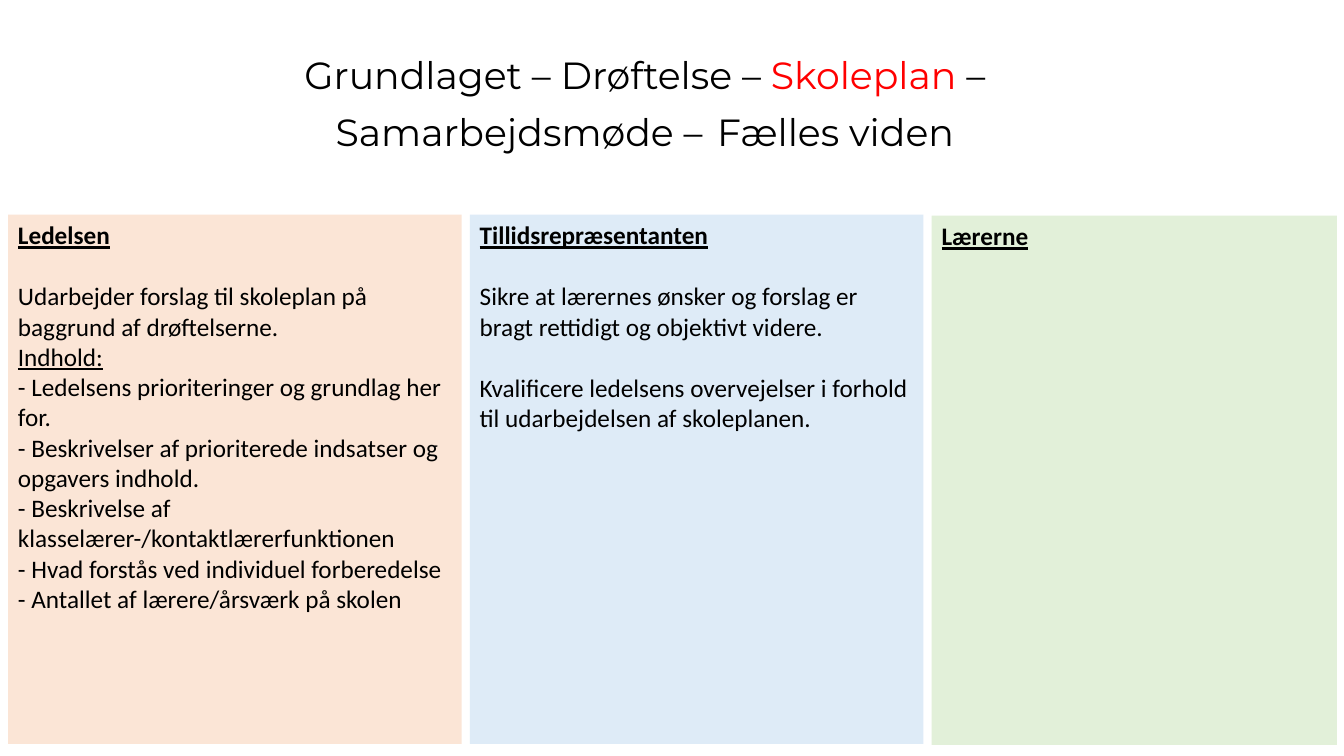
from pptx import Presentation
from pptx import util as u
from pptx.dml.color import RGBColor
from pptx.enum import shapes, text

BLACK = RGBColor(0x00, 0x00, 0x00)
RED = RGBColor(0xFF, 0x00, 0x00)
PEACH = RGBColor(0xFB, 0xE5, 0xD6)
LIGHT_BLUE = RGBColor(0xDE, 0xEB, 0xF7)
LIGHT_GREEN = RGBColor(0xE2, 0xF0, 0xD9)

SCALE = 9144  # EMU per px, 100 px to the inch
SLIDE_SIZE = (1333, 750)
TITLE_BOX = (162, 26, 955, 136)
COLUMN_LEFT, COLUMN_HEIGHT, COLUMN_GAP = 8, 525, 8

TITLE_RUNS = [
    ("Grundlaget – Drøftelse – ", 27, BLACK),
    ("Skoleplan", 27, RED),
    (" – Samarbejdsmøde –", 27, BLACK),
    (" ", 40, BLACK),
    ("Fælles viden", 27, BLACK),
]

HEADING = {"bold": True, "underline": True}
SUBHEADING = {"bold": False, "underline": True}
BODY = {"bold": False, "underline": False}
LINE_GAP = 22  # points, one line of body text

# Each column: fill, top, width, paragraphs of (text, format, space before)
COLUMNS = [
    (PEACH, 213, 450, [
        ("Ledelsen", HEADING, 0),
        ("Udarbejder forslag til skoleplan på baggrund af drøftelserne.", BODY, LINE_GAP),
        ("Indhold:", SUBHEADING, 0),
        ("- Ledelsens prioriteringer og grundlag her for.", BODY, 0),
        ("- Beskrivelser af prioriterede indsatser og opgavers indhold.", BODY, 0),
        ("- Beskrivelse af klasselærer-/kontaktlærerfunktionen", BODY, 0),
        ("- Hvad forstås ved individuel forberedelse", BODY, 0),
        ("- Antallet af lærere/årsværk på skolen", BODY, 0),
    ]),
    (LIGHT_BLUE, 213, 450, [
        ("Tillidsrepræsentanten", HEADING, 0),
        ("Sikre at lærernes ønsker og forslag er bragt rettidigt og objektivt videre.",
         BODY, LINE_GAP),
        ("Kvalificere ledelsens overvejelser i forhold til udarbejdelsen af skoleplanen.",
         BODY, LINE_GAP),
    ]),
    (LIGHT_GREEN, 214, 402, [
        ("Lærerne", HEADING, 0),
    ]),
]


def px(length):
    return u.Emu(length * SCALE)


def add_run(paragraph, words, color, **formats):
    run = paragraph.add_run()
    run.text = words
    for name, value in formats.items():
        setattr(run.font, name, value)
    run.font.color.rgb = color


def fill_title(title):
    title.left, title.top, title.width, title.height = map(px, TITLE_BOX)
    frame = title.text_frame
    frame.word_wrap = True
    frame.auto_size = text.MSO_AUTO_SIZE.NONE
    frame.vertical_anchor = text.MSO_ANCHOR.BOTTOM
    paragraph = frame.paragraphs[0]
    paragraph.alignment = text.PP_ALIGN.CENTER
    paragraph.line_spacing = 0.9
    paragraph.space_before = u.Pt(0)
    for words, size, color in TITLE_RUNS:
        add_run(paragraph, words, color, name="Montserrat", size=u.Pt(size))


def add_column(slide, box, fill, paragraphs):
    shape = slide.shapes.add_shape(shapes.MSO_SHAPE.RECTANGLE, *map(px, box))
    shape.shadow.inherit = False
    shape.fill.solid()
    shape.fill.fore_color.rgb = fill
    shape.line.fill.background()
    frame = shape.text_frame
    frame.word_wrap = True
    frame.vertical_anchor = text.MSO_ANCHOR.TOP
    for index, (words, formats, space) in enumerate(paragraphs):
        paragraph = frame.add_paragraph() if index else frame.paragraphs[0]
        paragraph.alignment = text.PP_ALIGN.LEFT
        paragraph.space_before = u.Pt(space)
        add_run(paragraph, words, BLACK, name="Calibri", size=u.Pt(18), **formats)


def main():
    presentation = Presentation()
    presentation.slide_width, presentation.slide_height = map(px, SLIDE_SIZE)
    slide = presentation.slides.add_slide(presentation.slide_layouts[5])
    fill_title(slide.shapes.title)
    left = COLUMN_LEFT
    for fill, top, width, paragraphs in COLUMNS:
        add_column(slide, (left, top, width, COLUMN_HEIGHT), fill, paragraphs)
        left += width + COLUMN_GAP
    presentation.save("out.pptx")


if __name__ == "__main__":
    main()
